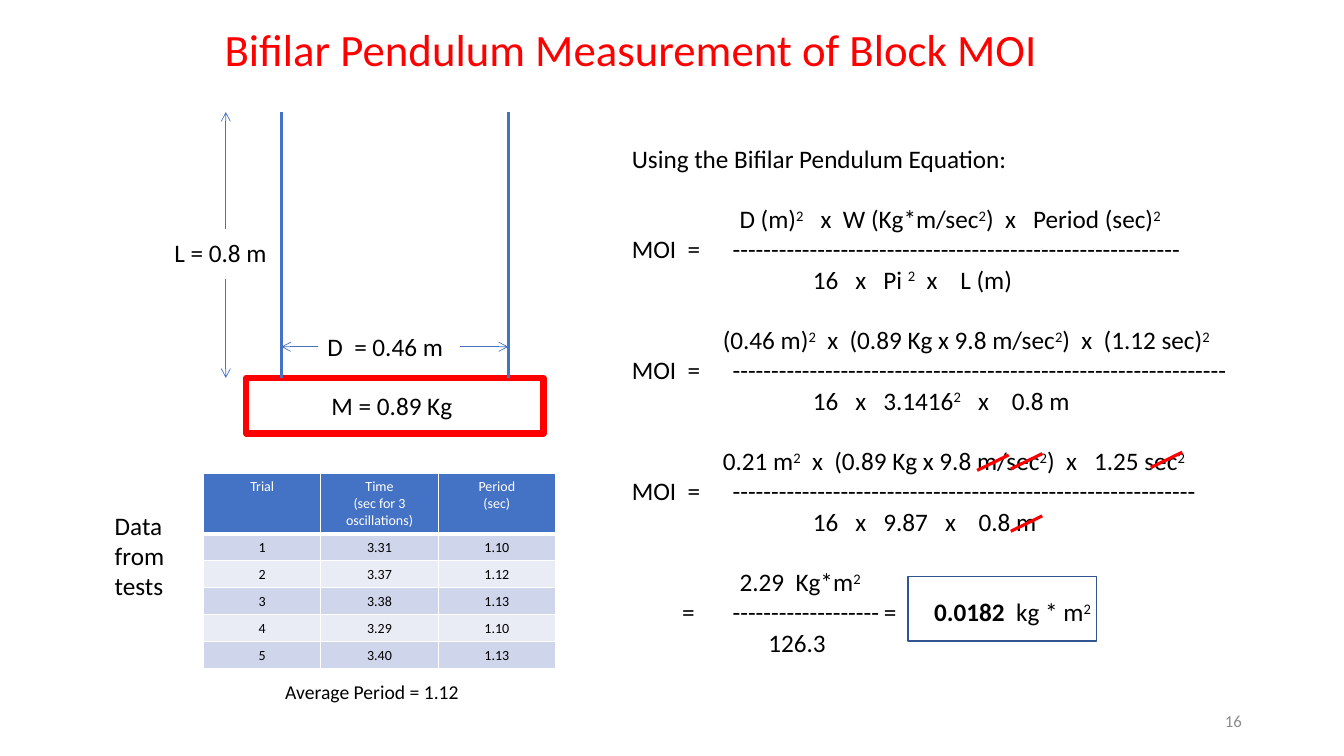
import dataclasses

import lxml.etree
import pptx
import pptx.dml.color
import pptx.enum.shapes
import pptx.enum.text
import pptx.oxml.ns
import pptx.util

Pt = pptx.util.Pt
ALIGN = pptx.enum.text.PP_ALIGN
ANCHOR = pptx.enum.text.MSO_ANCHOR
qn = pptx.oxml.ns.qn


@dataclasses.dataclass(frozen=True)
class Theme:
    font: str = "Calibri"
    red: str = "FF0000"
    blue: str = "4472C4"
    dark_blue: str = "325491"
    black: str = "000000"
    white: str = "FFFFFF"
    grey: str = "8C8C8C"
    bands: tuple = ("CFD5EA", "E9EBF5")
    title: int = 32
    body: int = 18
    caption: int = 14
    footer: int = 12
    cell: int = 10


def rgb(value):
    return pptx.dml.color.RGBColor.from_string(value)


class SlideBuilder:
    def __init__(self, slide, theme):
        self.shapes = slide.shapes
        self.theme = theme

    def style(self, paragraph, size, color, align=ALIGN.LEFT):
        paragraph.alignment = align
        font = paragraph.font
        font.name, font.size, font.bold = self.theme.font, Pt(size), False
        font.color.rgb = rgb(color)

    def frame(self, left, top, width, height, anchor=ANCHOR.TOP):
        frame = self.shapes.add_textbox(Pt(left), Pt(top), Pt(width), Pt(height)).text_frame
        frame.word_wrap = True
        frame.vertical_anchor = anchor
        return frame

    def label(self, wording, box, size=None, color=None, align=ALIGN.LEFT, anchor=ANCHOR.TOP):
        paragraph = self.frame(*box, anchor=anchor).paragraphs[0]
        paragraph.text = wording
        self.style(paragraph, size or self.theme.body, color or self.theme.black, align)
        return paragraph

    def outline(self, left, top, width, height, color, weight):
        block = self.shapes.add_shape(pptx.enum.shapes.MSO_SHAPE.RECTANGLE,
                                      Pt(left), Pt(top), Pt(width), Pt(height))
        block.shadow.inherit = False
        block.fill.background()
        block.line.color.rgb = rgb(color)
        block.line.width = Pt(weight)

    def line(self, start, end, color, weight, arrow=False):
        connector = self.shapes.add_connector(pptx.enum.shapes.MSO_CONNECTOR.STRAIGHT,
                                              *map(Pt, (*start, *end)))
        connector.line.color.rgb = rgb(color)
        connector.line.width = Pt(weight)
        if arrow:
            lxml.etree.SubElement(connector.line._get_or_add_ln(), qn("a:tailEnd"), type="arrow")
        lxml.etree.SubElement(connector._element.spPr, qn("a:effectLst"))

    def equations(self, box, rows, tabs, gap):
        """Each row is (indent, gap before, text); ^ encloses superscript, _ bold."""
        frame = self.frame(*box)
        for number, (indent, spaced, wording) in enumerate(rows):
            paragraph = frame.add_paragraph() if number else frame.paragraphs[0]
            properties = paragraph._p.get_or_add_pPr()
            properties.set("marL", str(Pt(indent)))
            properties.set("indent", "0")
            if "\t" in wording:
                stops = lxml.etree.SubElement(properties, qn("a:tabLst"))
                for tab in tabs:
                    lxml.etree.SubElement(stops, qn("a:tab"), pos=str(Pt(tab)), algn="l")
            if spaced:
                paragraph.space_before = Pt(gap)
            self.style(paragraph, self.theme.body, self.theme.black)
            for i, piece in enumerate(wording.split("^")):
                for j, part in enumerate(piece.split("_")):
                    if not part:
                        continue
                    run = paragraph.add_run()
                    run.text = part
                    if i % 2:
                        run.font._element.set("baseline", "30000")
                    if j % 2:
                        run.font.bold = True

    def cell(self, cell, wording, fill, color, bottom):
        for side in "LRTB":
            weight = bottom if side == "B" else 1
            border = lxml.etree.SubElement(cell._tc.get_or_add_tcPr(), qn("a:ln" + side),
                                           w=str(Pt(weight)))
            paint = lxml.etree.SubElement(border, qn("a:solidFill"))
            lxml.etree.SubElement(paint, qn("a:srgbClr"), val=self.theme.white)
        cell.fill.solid()
        cell.fill.fore_color.rgb = rgb(fill)
        cell.text = wording
        for paragraph in cell.text_frame.paragraphs:
            self.style(paragraph, self.theme.cell, color, ALIGN.CENTER)

    def table(self, left, top, width, header_height, row_height, records):
        columns = len(records[0])
        height = header_height + row_height * (len(records) - 1)
        table = self.shapes.add_table(len(records), columns, Pt(left), Pt(top),
                                      Pt(width), Pt(height)).table
        table.horz_banding = False
        for column in table.columns:
            column.width = Pt(width / columns)
        for r, record in enumerate(records):
            table.rows[r].height = Pt(row_height if r else header_height)
            fill = self.theme.bands[(r - 1) % 2] if r else self.theme.blue
            color = self.theme.black if r else self.theme.white
            for c, wording in enumerate(record):
                self.cell(table.cell(r, c), wording, fill, color, 1 if r else 3)


def main():
    deck = pptx.Presentation()
    deck.slide_width, deck.slide_height = Pt(960), Pt(540)
    theme = Theme()
    page = SlideBuilder(deck.slides.add_slide(deck.slide_layouts[6]), theme)

    # Title
    title = page.label("Bifilar Pendulum Measurement of Block MOI", (153.4, 12.2, 648, 49.7),
                       theme.title, theme.red, anchor=ANCHOR.MIDDLE)
    title.line_spacing = 0.9

    # Trial data
    trials = [("1", "3.31", "1.10"), ("2", "3.37", "1.12"), ("3", "3.38", "1.13"),
              ("4", "3.29", "1.10"), ("5", "3.40", "1.13")]
    header = ("Trial", "Time\n(sec for 3 oscillations)", "Period\n(sec)")
    page.table(145.4, 338, 251.4, 43.2, 19.3, [header, *trials])
    page.label("Average Period = 1.12", (196.6, 482.4, 158.4, 24.5), theme.caption)
    page.label("Data from tests", (74.9, 360.7, 59.8, 72.7))

    # Pendulum: block hung from two cords
    support, block_top, center, half_span, block_width = 80, 270, 282, 81, 212.4
    page.outline(center - block_width / 2, block_top, block_width, 39.6, theme.red, 4.5)
    cords = (center - half_span, center + half_span)
    for cord in cords:
        page.line((cord, support), (cord, block_top), theme.blue, 2.25)
    for wording, box in [("L = 0.8 m", (117.4, 165.6, 82.8, 29)),
                         ("D  = 0.46 m", (226.8, 232.9, 102.2, 29)),
                         ("M = 0.89 Kg", (229.7, 275, 124.6, 29))]:
        page.label(wording, box)

    # Dimension arrows
    span_y, length_x = 247.7, 161.3
    for start, end in [((328.3, span_y), (cords[1], span_y)),
                       ((226.8, span_y), (cords[0], span_y)),
                       ((length_x, 163.4), (length_x, support)),
                       ((length_x, 199.4), (length_x, block_top))]:
        page.line(start, end, theme.blue, 0.5, arrow=True)

    # Equations
    numerator, inset, denominator = 65, 77, 129.3
    rows = [
        (0, False, "Using the Bifilar Pendulum Equation:"),
        (inset, True, "D (m)^2^   x  W (Kg*m/sec^2^)  x   Period (sec)^2^"),
        (0, False, "MOI  =\t" + "-" * 58),
        (denominator, False, "16   x   Pi ^2^  x    L (m)"),
        (numerator, True, "(0.46 m)^2^  x  (0.89 Kg x 9.8 m/sec^2^)  x  (1.12 sec)^2^"),
        (0, False, "MOI  =\t" + "-" * 64),
        (denominator, False, "16   x   3.1416^2^   x    0.8 m"),
        (numerator, True, "0.21 m^2^  x  (0.89 Kg x 9.8 m/sec^2^)  x   1.25 sec^2^"),
        (0, False, "MOI  =\t" + "-" * 60),
        (denominator, False, "16   x   9.87   x    0.8 m"),
        (inset, True, "2.29  Kg*m^2^"),
        (0, False, "\t=\t" + "-" * 19 + "\t=\t_0.0182_  kg * m^2^"),
        (97.5, False, "126.3"),
    ]
    page.equations((444.2, 98.6, 450, 378), rows, (41, numerator, 183, 203.6), 21.6)

    # Cancelled units
    for left, bottom in [(822, 334), (722, 335), (722, 379.5), (698, 336)]:
        page.line((left, bottom), (left + 22.5, bottom - 11), theme.red, 2.25)

    # Result frame and page number
    page.outline(648.7, 411.8, 134.6, 46.1, theme.dark_blue, 1)
    page.label("16", (678.2, 500.4, 216, 28.8), theme.footer, theme.grey,
               ALIGN.RIGHT, ANCHOR.MIDDLE)

    deck.save("out.pptx")


if __name__ == "__main__":
    main()
